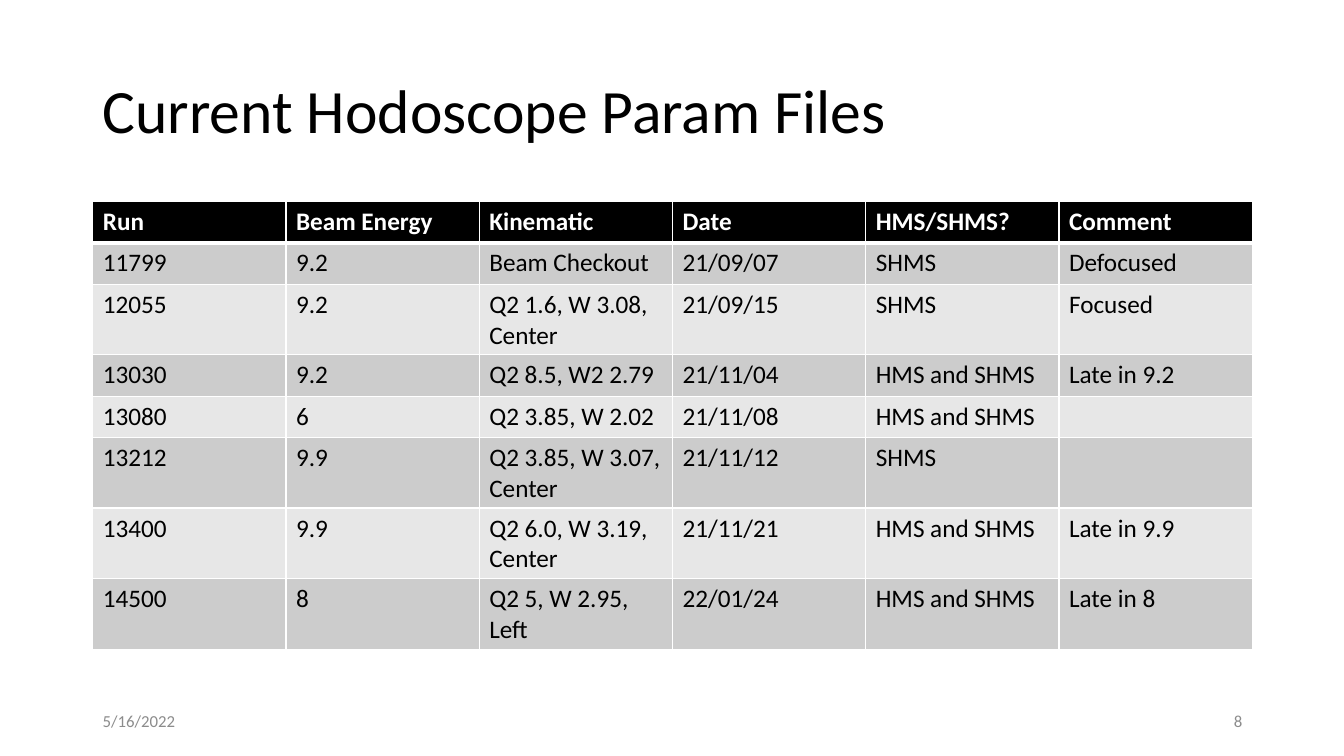
from lxml import etree
from pptx import Presentation
from pptx.dml.color import RGBColor
from pptx.enum.text import MSO_ANCHOR, PP_ALIGN
from pptx.oxml.ns import qn
from pptx.util import Inches, Pt

BLACK = RGBColor(0x00, 0x00, 0x00)
WHITE = RGBColor(0xFF, 0xFF, 0xFF)
GRAY = RGBColor(0x8C, 0x8C, 0x8C)
DARK_BAND = RGBColor(0xCC, 0xCC, 0xCC)
LIGHT_BAND = RGBColor(0xE7, 0xE7, 0xE7)
MIDDLE = MSO_ANCHOR.MIDDLE
LEFT, RIGHT = PP_ALIGN.LEFT, PP_ALIGN.RIGHT

MARGIN = 0.92
CONTENT_WIDTH = 11.5
ROW_HEIGHT = 0.41
FOOTER_WIDTH = 3
RUNS = [
    ("Run", "Beam Energy", "Kinematic", "Date", "HMS/SHMS?", "Comment"),
    ("11799", "9.2", "Beam Checkout", "21/09/07", "SHMS", "Defocused"),
    ("12055", "9.2", "Q2 1.6, W 3.08, Center", "21/09/15", "SHMS", "Focused"),
    ("13030", "9.2", "Q2 8.5, W2 2.79", "21/11/04", "HMS and SHMS", "Late in 9.2"),
    ("13080", "6", "Q2 3.85, W 2.02", "21/11/08", "HMS and SHMS", ""),
    ("13212", "9.9", "Q2 3.85, W 3.07, Center", "21/11/12", "SHMS", ""),
    ("13400", "9.9", "Q2 6.0, W 3.19, Center", "21/11/21", "HMS and SHMS", "Late in 9.9"),
    ("14500", "8", "Q2 5, W 2.95, Left", "22/01/24", "HMS and SHMS", "Late in 8"),
]


class SlideBuilder:
    font_name = "Calibri"

    def __init__(self, page):
        self.page = page

    def style(self, para, size, color, bold=False):
        for span in para.runs:
            span.font.name = self.font_name
            span.font.size = Pt(size)
            span.font.color.rgb = color
            span.font.bold = bold

    def text(self, words, left, top, width, height, size, color, align=LEFT, spacing=1.0):
        box = self.page.shapes.add_textbox(
            Inches(left), Inches(top), Inches(width), Inches(height))
        frame = box.text_frame
        frame.word_wrap = True
        frame.vertical_anchor = MIDDLE
        frame.text = words
        para = frame.paragraphs[0]
        para.alignment = align
        para.line_spacing = spacing
        self.style(para, size, color)

    def border(self, cell, side, width):
        properties = cell._tc.get_or_add_tcPr()
        line = etree.SubElement(properties, qn(f"a:ln{side}"), w=str(Pt(width)))
        fill = etree.SubElement(line, qn("a:solidFill"))
        etree.SubElement(fill, qn("a:srgbClr"), val=str(WHITE))

    def table(self, rows, left, top, width, row_height):
        columns = len(rows[0])
        table = self.page.shapes.add_table(
            len(rows), columns, Inches(left), Inches(top),
            Inches(width), Inches(row_height * len(rows))).table
        for column in table.columns:
            column.width = Inches(width / columns)
        for row_index, row in enumerate(rows):
            table.rows[row_index].height = Inches(row_height)
            header = row_index == 0
            band = DARK_BAND if row_index % 2 else LIGHT_BAND
            widths = {"L": 1, "R": 1, "T": 3 if row_index == 1 else 1, "B": 3 if header else 1}
            for column_index, words in enumerate(row):
                cell = table.cell(row_index, column_index)
                for side, line_width in widths.items():
                    self.border(cell, side, line_width)
                cell.fill.solid()
                cell.fill.fore_color.rgb = BLACK if header else band
                if words:
                    cell.text_frame.text = words
                    self.style(cell.text_frame.paragraphs[0], 18,
                               WHITE if header else BLACK, header)


def main():
    deck = Presentation()
    deck.slide_width = Inches(13.33)
    deck.slide_height = Inches(7.5)
    slide = SlideBuilder(deck.slides.add_slide(deck.slide_layouts[6]))
    slide.text("Current Hodoscope Param Files", MARGIN, 0.4, CONTENT_WIDTH, 1.45,
               44, BLACK, spacing=0.9)
    slide.table(RUNS, MARGIN, 2, CONTENT_WIDTH, ROW_HEIGHT)
    slide.text("5/16/2022", MARGIN, 6.95, FOOTER_WIDTH, 0.4, 12, GRAY)
    slide.text("8", MARGIN + CONTENT_WIDTH - FOOTER_WIDTH, 6.95, FOOTER_WIDTH, 0.4,
               12, GRAY, RIGHT)
    deck.save("out.pptx")


if __name__ == "__main__":
    main()
